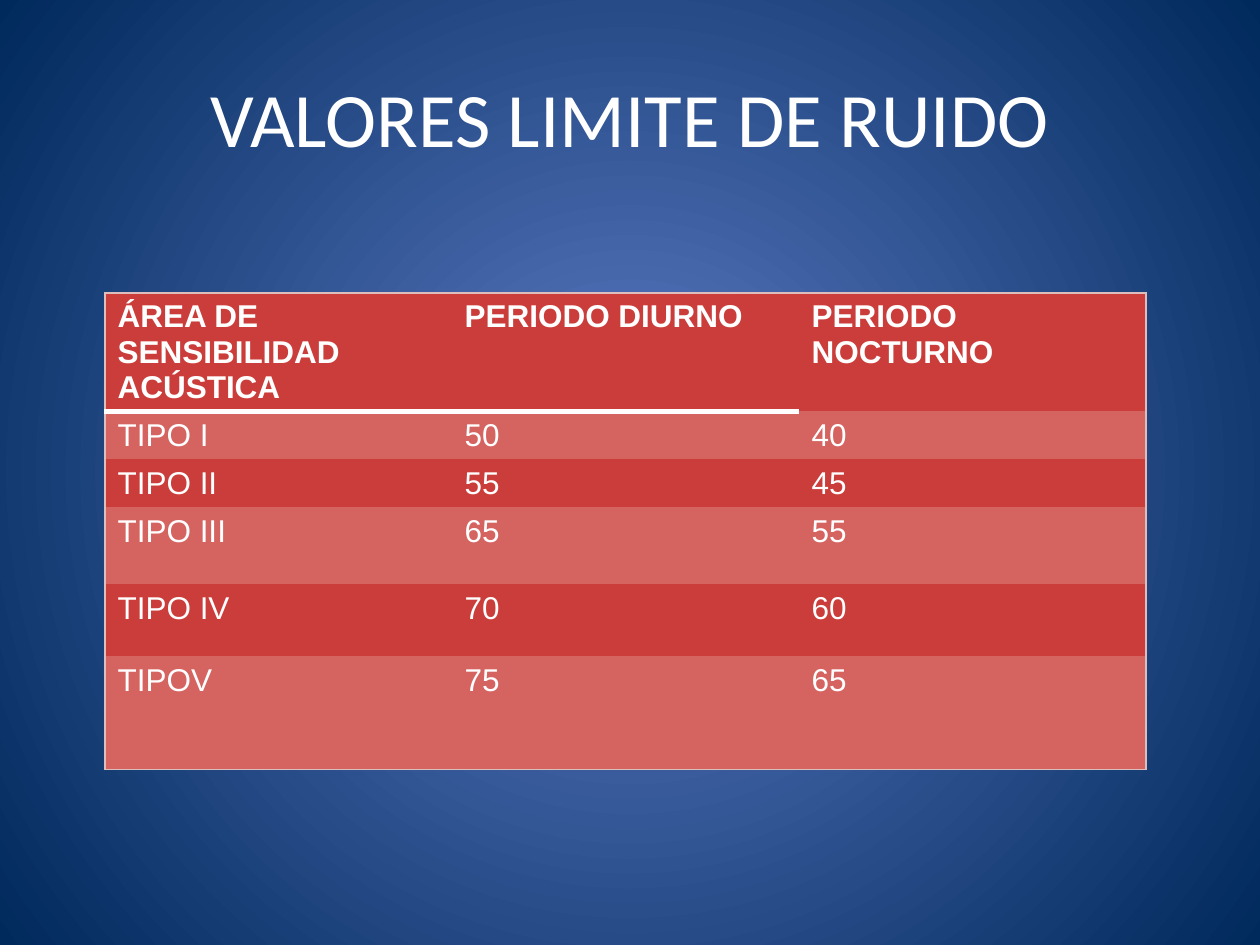
from pptx import Presentation, util as u
from pptx.dml.color import RGBColor
from pptx.enum import text
from pptx.oxml import parse_xml
from pptx.oxml.ns import nsdecls, qn

THEME = {
    "center": "5E7CC5", "edge": "00295C", "text": "FFFFFF",
    "dark_row": "CB3D3A", "light_row": "D56461", "outline": "DEBDBD",
    "title_font": "Calibri", "body_font": "Arial",
    "title_size": 44, "body_size": 18,
}
PX = 914400 / 126
COLUMN_WIDTH = 347
ROW_HEIGHTS = [83, 48, 48, 77, 72, 113]
ROWS = [
    ("ÁREA DE SENSIBILIDAD ACÚSTICA", "PERIODO DIURNO", "PERIODO NOCTURNO"),
    ("TIPO I", "50", "40"),
    ("TIPO II", "55", "45"),
    ("TIPO III", "65", "55"),
    ("TIPO IV", "70", "60"),
    ("TIPOV", "75", "65"),
]


def write(frame, content, font, size, bold=False, align=text.PP_ALIGN.LEFT):
    paragraph = frame.paragraphs[0]
    paragraph.alignment = align
    run = paragraph.add_run()
    run.text = content
    run.font.name, run.font.size, run.font.bold = font, u.Pt(size), bold
    run.font.color.rgb = RGBColor.from_string(THEME["text"])


def border(cell, side, color, points):
    line = parse_xml(
        f'<a:{side} {nsdecls("a")} w="{u.Pt(points)}"><a:solidFill>'
        f'<a:srgbClr val="{color}"/></a:solidFill></a:{side}>')
    properties = cell._tc.get_or_add_tcPr()
    # Borders come before the fill, in the order they are added
    properties.insert(len(properties), line)


presentation = Presentation()
presentation.slide_width = round(1260 * PX)
presentation.slide_height = round(945 * PX)
slide = presentation.slides.add_slide(presentation.slide_layouts[5])

# Radial background
fill = slide.background.fill
fill.gradient()
for stop, name in zip(fill.gradient_stops, ("center", "edge")):
    stop.color.rgb = RGBColor.from_string(THEME[name])
linear = slide.background._cSld.find(".//" + qn("a:lin"))
linear.getparent().replace(linear, parse_xml(
    f'<a:path {nsdecls("a")} path="circle">'
    '<a:fillToRect l="50000" t="50000" r="50000" b="50000"/></a:path>'))

# Title
title = slide.shapes.title
title.left, title.top, title.width, title.height = (
    round(n * PX) for n in (63, 38, 1134, 157))
title.text_frame.vertical_anchor = text.MSO_ANCHOR.MIDDLE
write(title.text_frame, "VALORES LIMITE DE RUIDO", THEME["title_font"],
      THEME["title_size"], align=text.PP_ALIGN.CENTER)

# Noise limit table, with a plain style that has no grid
last_row, last_column = len(ROWS) - 1, len(ROWS[0]) - 1
frame = slide.shapes.add_table(
    len(ROWS), len(ROWS[0]), round(105 * PX), round(293 * PX),
    round(COLUMN_WIDTH * len(ROWS[0]) * PX), round(sum(ROW_HEIGHTS) * PX))
table = frame.table
table.horz_banding = False
style = table._tbl.tblPr.find(qn("a:tableStyleId"))
style.text = "{2D5ABB26-0587-4C30-8999-92F81FD0307C}"
for column in table.columns:
    column.width = round(COLUMN_WIDTH * PX)

for r, values in enumerate(ROWS):
    table.rows[r].height = round(ROW_HEIGHTS[r] * PX)
    for c, value in enumerate(values):
        cell = table.cell(r, c)
        write(cell.text_frame, value, THEME["body_font"],
              THEME["body_size"], bold=r == 0)
        # Outer outline, and the white rule under the first two headings
        if c == 0:
            border(cell, "lnL", THEME["outline"], 0.75)
        if c == last_column:
            border(cell, "lnR", THEME["outline"], 0.75)
        if r == 0:
            border(cell, "lnT", THEME["outline"], 0.75)
        if r == 0 and c < last_column:
            border(cell, "lnB", THEME["text"], 3)
        if r == last_row:
            border(cell, "lnB", THEME["outline"], 0.75)
        cell.fill.solid()
        cell.fill.fore_color.rgb = RGBColor.from_string(
            THEME["light_row" if r % 2 else "dark_row"])

presentation.save("out.pptx")
